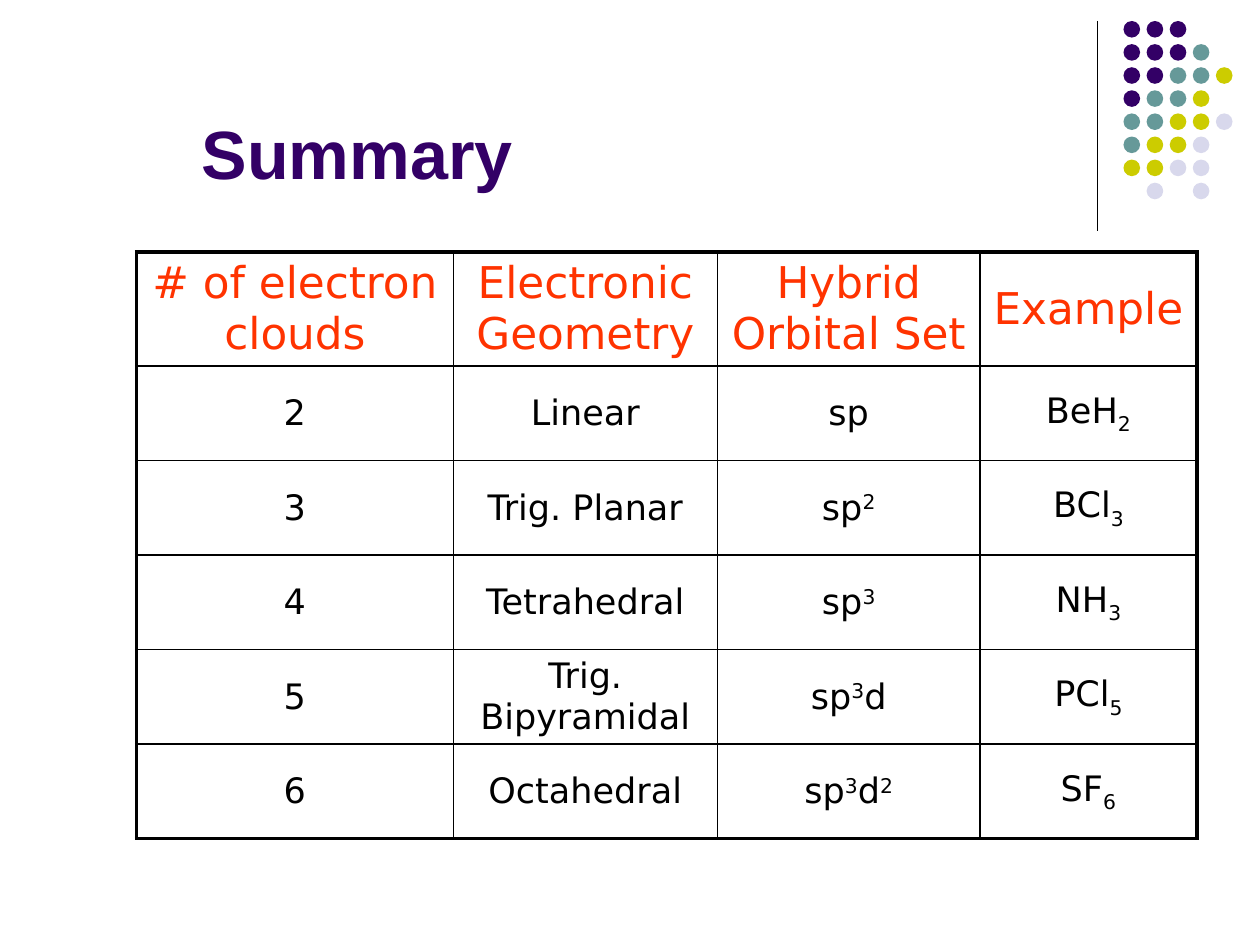
from dataclasses import dataclass

from lxml.etree import SubElement
from pptx import Presentation
from pptx.dml.color import RGBColor
from pptx.enum.shapes import MSO_CONNECTOR, MSO_SHAPE
from pptx.enum.text import MSO_ANCHOR, MSO_AUTO_SIZE, PP_ALIGN
from pptx.oxml.ns import qn
from pptx.util import Pt


@dataclass(frozen=True)
class Theme:
    """Colours, fonts, type sizes and line widths of the slide."""

    purple: str = "330066"
    teal: str = "669999"
    olive: str = "CCCC00"
    lavender: str = "D8D8EC"
    red: str = "FF3300"
    black: str = "000000"
    title_font: str = "Arial"
    table_font: str = "DejaVu Sans"
    title_size: float = 39
    header_size: float = 25
    body_size: float = 20
    rule_width: float = 0.75
    inner_border: float = 1
    outer_border: float = 2.25


THEME = Theme()

DOT_COLOURS = {"P": THEME.purple, "T": THEME.teal, "O": THEME.olive, "L": THEME.lavender}
DOT_ROWS = ["PPP", "PPPT", "PPTTO", "PTTO", "TTOOL", "TOOL", "OOLL", ".L.L"]
DOT_PITCH = 13.2
DOT_SIZE = 9.5

BASELINES = {"^": "30000", "_": "-25000"}
COLUMN_WIDTHS = [181, 151, 150, 124]
ROW_HEIGHTS = [65, 54, 54, 54, 54, 54]
TABLE_ROWS = [
    ["# of electron clouds", "Electronic Geometry", "Hybrid Orbital Set", "Example"],
    ["2", "Linear", "sp", "BeH|_2"],
    ["3", "Trig. Planar", "sp|^2", "BCl|_3"],
    ["4", "Tetrahedral", "sp|^3", "NH|_3"],
    ["5", "Trig. Bipyramidal", "sp|^3|d", "PCl|_5"],
    ["6", "Octahedral", "sp|^3|d|^2", "SF|_6"],
]


def add_run(paragraph, text, font_name, size, colour, bold=False):
    """Add one formatted run, raised or lowered if marked with ^ or _."""
    run = paragraph.add_run()
    run.text = text.lstrip("^_")
    run.font.name = font_name
    run.font.size = Pt(size)
    run.font.bold = bold
    run.font.color.rgb = RGBColor.from_string(colour)
    if text[0] in BASELINES:
        run.font._element.set("baseline", BASELINES[text[0]])


def add_ornament(slide, left, top, height):
    """Draw the vertical rule and the dot grid to its right."""
    rule = slide.shapes.add_connector(
        MSO_CONNECTOR.STRAIGHT, Pt(left), Pt(top), Pt(left), Pt(top + height)
    )
    rule.line.width = Pt(THEME.rule_width)
    rule.line.color.rgb = RGBColor.from_string(THEME.black)
    SubElement(rule._element.spPr, qn("a:effectLst"))

    grid_left = left + 15
    dots = slide.shapes.add_group_shape()
    for row, colour_keys in enumerate(DOT_ROWS):
        for column, key in enumerate(colour_keys):
            if key not in DOT_COLOURS:
                continue
            dot = dots.shapes.add_shape(
                MSO_SHAPE.OVAL,
                Pt(grid_left + column * DOT_PITCH),
                Pt(top + row * DOT_PITCH),
                Pt(DOT_SIZE),
                Pt(DOT_SIZE),
            )
            dot.shadow.inherit = False
            dot.fill.solid()
            dot.fill.fore_color.rgb = RGBColor.from_string(DOT_COLOURS[key])
            dot.line.fill.background()


def place_title(slide, text, left, top, width, height):
    """Move the title placeholder into its box and fill it."""
    title = slide.shapes.title
    title.left, title.top, title.width, title.height = map(Pt, (left, top, width, height))
    frame = title.text_frame
    frame.word_wrap = True
    frame.auto_size = MSO_AUTO_SIZE.NONE
    frame.vertical_anchor = MSO_ANCHOR.BOTTOM
    paragraph = frame.paragraphs[0]
    paragraph.alignment = PP_ALIGN.LEFT
    add_run(paragraph, text, THEME.title_font, THEME.title_size, THEME.purple, bold=True)


def set_borders(cell, outer_sides):
    """Border a cell, with heavier lines on the given outer sides."""
    properties = cell._tc.get_or_add_tcPr()
    for side in "LRTB":
        width = THEME.outer_border if side in outer_sides else THEME.inner_border
        line = SubElement(properties, qn(f"a:ln{side}"), w=str(Pt(width)))
        fill = SubElement(line, qn("a:solidFill"))
        SubElement(fill, qn("a:srgbClr"), val=THEME.black)


def fill_cell(cell, text, size, colour):
    """Centre the text in a cell without a background."""
    cell.fill.background()
    cell.vertical_anchor = MSO_ANCHOR.MIDDLE
    paragraph = cell.text_frame.paragraphs[0]
    paragraph.alignment = PP_ALIGN.CENTER
    for part in text.split("|"):
        add_run(paragraph, part, THEME.table_font, size, colour)


def add_summary_table(slide, left, top):
    """Build the table of geometries and hybrid orbitals."""
    row_count, column_count = len(ROW_HEIGHTS), len(COLUMN_WIDTHS)
    table = slide.shapes.add_table(
        row_count, column_count, Pt(left), Pt(top), Pt(sum(COLUMN_WIDTHS)), Pt(sum(ROW_HEIGHTS))
    ).table
    table.first_row = False
    table.horz_banding = False
    for column, width in zip(table.columns, COLUMN_WIDTHS):
        column.width = Pt(width)
    for row, height in zip(table.rows, ROW_HEIGHTS):
        row.height = Pt(height)

    for row, texts in enumerate(TABLE_ROWS):
        is_header = row == 0
        size = THEME.header_size if is_header else THEME.body_size
        colour = THEME.red if is_header else THEME.black
        for column, text in enumerate(texts):
            at_edge = {
                "L": column == 0,
                "R": column == column_count - 1,
                "T": is_header,
                "B": row == row_count - 1,
            }
            cell = table.cell(row, column)
            set_borders(cell, [side for side, outer in at_edge.items() if outer])
            fill_cell(cell, text, size, colour)


def main():
    """Build the summary slide and save it."""
    presentation = Presentation()
    presentation.slide_width, presentation.slide_height = Pt(720), Pt(540)
    slide = presentation.slides.add_slide(presentation.slide_layouts[5])
    add_ornament(slide, left=627, top=12, height=120)
    place_title(slide, "Summary", left=108, top=24, width=576, height=90)
    add_summary_table(slide, left=78, top=144)
    presentation.save("out.pptx")


if __name__ == "__main__":
    main()
